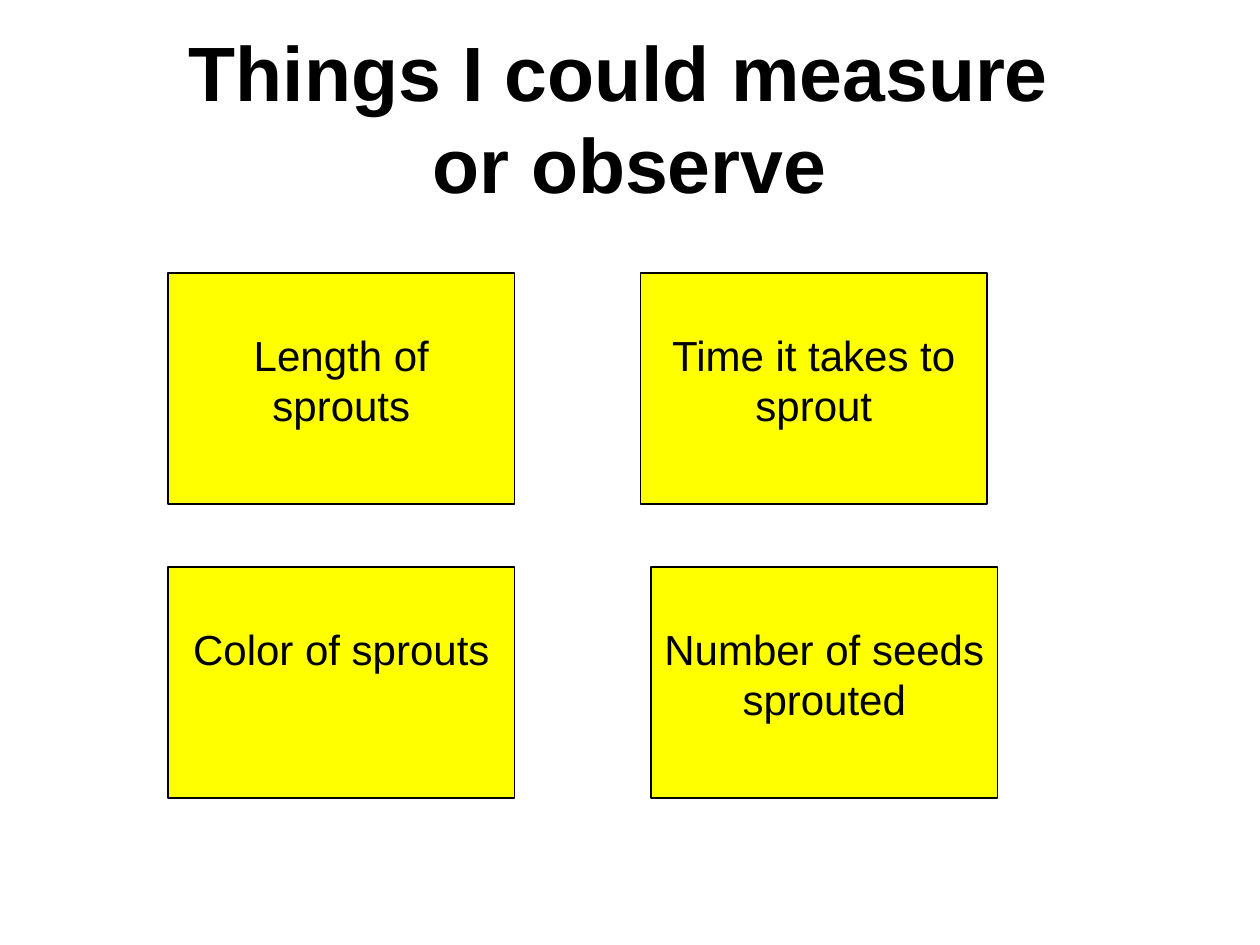
from dataclasses import dataclass

from pptx import Presentation
from pptx.dml.color import RGBColor
from pptx.enum.shapes import MSO_SHAPE
from pptx.enum.text import MSO_ANCHOR, PP_ALIGN
from pptx.util import Pt

RECTANGLE = MSO_SHAPE.RECTANGLE
TOP, MIDDLE = MSO_ANCHOR.TOP, MSO_ANCHOR.MIDDLE
CENTER = PP_ALIGN.CENTER
TITLE_ONLY = 5


@dataclass(frozen=True)
class Theme:
    font: str = "Arial"
    ink: RGBColor = RGBColor(0, 0, 0)
    card: RGBColor = RGBColor(255, 255, 0)
    title_size: int = 44
    card_size: int = 24
    line_width: float = 0.75


THEME = Theme()
CARD_WIDTH, CARD_HEIGHT = 198, 132
CARD_TOP_INSET = 32
ROWS = [
    # top, then (left, text) for each card
    (156, [(96, "Length of sprouts"), (366, "Time it takes to sprout")]),
    (324, [(96, "Color of sprouts"), (372, "Number of seeds sprouted")]),
]


def format_text(text_frame, size, bold, anchor):
    text_frame.word_wrap = True
    text_frame.vertical_anchor = anchor
    for paragraph in text_frame.paragraphs:
        paragraph.alignment = CENTER
        for run in paragraph.runs:
            run.font.name = THEME.font
            run.font.size = Pt(size)
            run.font.bold = bold
            run.font.color.rgb = THEME.ink


def add_title(slide, text, left, top, width, height):
    title = slide.shapes.title
    title.left, title.top = Pt(left), Pt(top)
    title.width, title.height = Pt(width), Pt(height)
    title.text_frame.text = text
    format_text(title.text_frame, THEME.title_size, True, MIDDLE)


def add_card(slide, text, left, top, width, height):
    card = slide.shapes.add_shape(RECTANGLE, Pt(left), Pt(top), Pt(width), Pt(height))
    card.shadow.inherit = False
    card.fill.solid()
    card.fill.fore_color.rgb = THEME.card
    card.line.color.rgb = THEME.ink
    card.line.width = Pt(THEME.line_width)
    card.text_frame.text = text
    card.text_frame.margin_top = Pt(CARD_TOP_INSET)
    format_text(card.text_frame, THEME.card_size, False, TOP)


def main():
    presentation = Presentation()
    presentation.slide_width, presentation.slide_height = Pt(720), Pt(540)
    slide = presentation.slides.add_slide(presentation.slide_layouts[TITLE_ONLY])
    add_title(slide, "Things I could measure \vor observe", 36, 21.6, 648, 90)
    for top, cards in ROWS:
        for left, text in cards:
            add_card(slide, text, left, top, CARD_WIDTH, CARD_HEIGHT)
    presentation.save("out.pptx")


if __name__ == "__main__":
    main()
